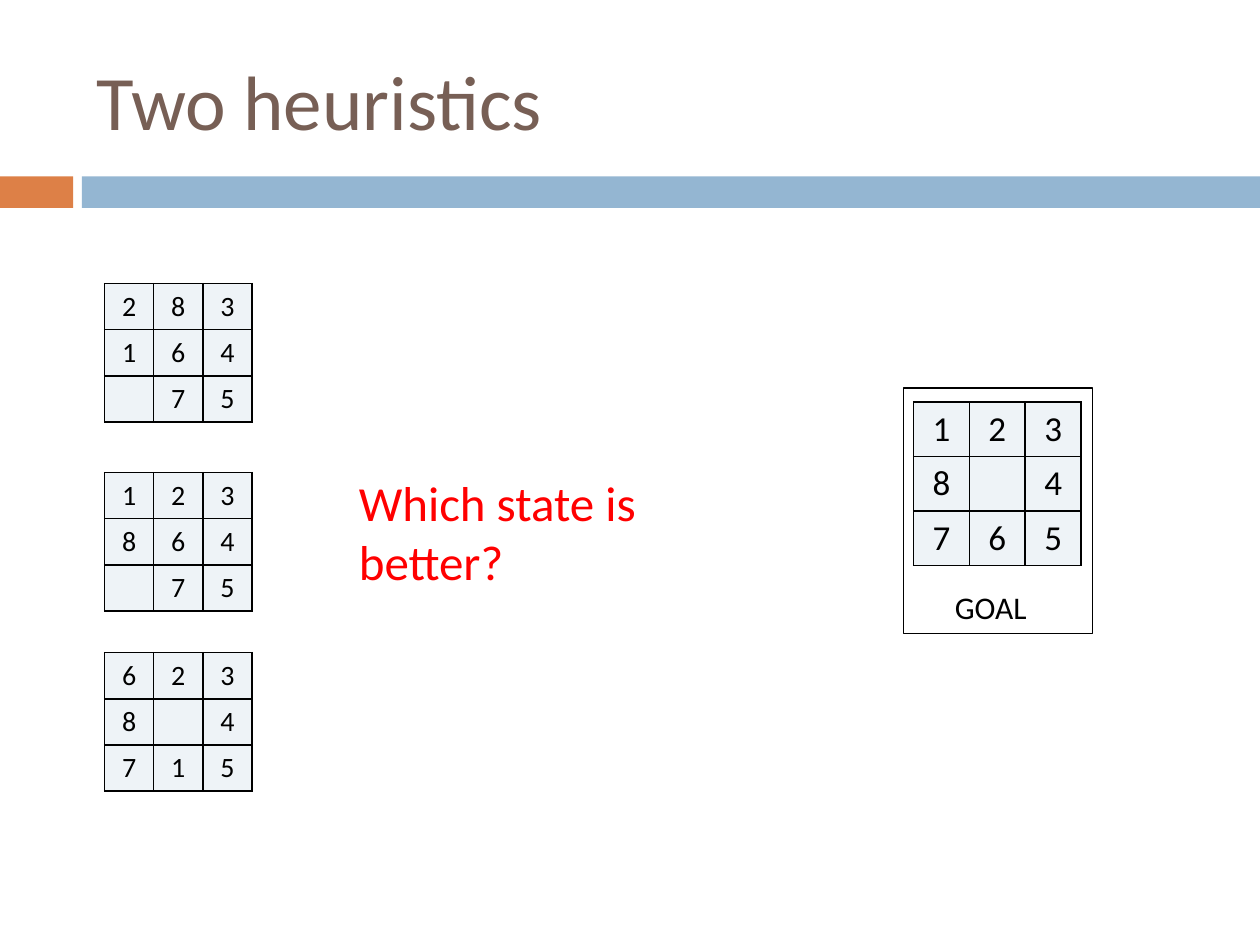
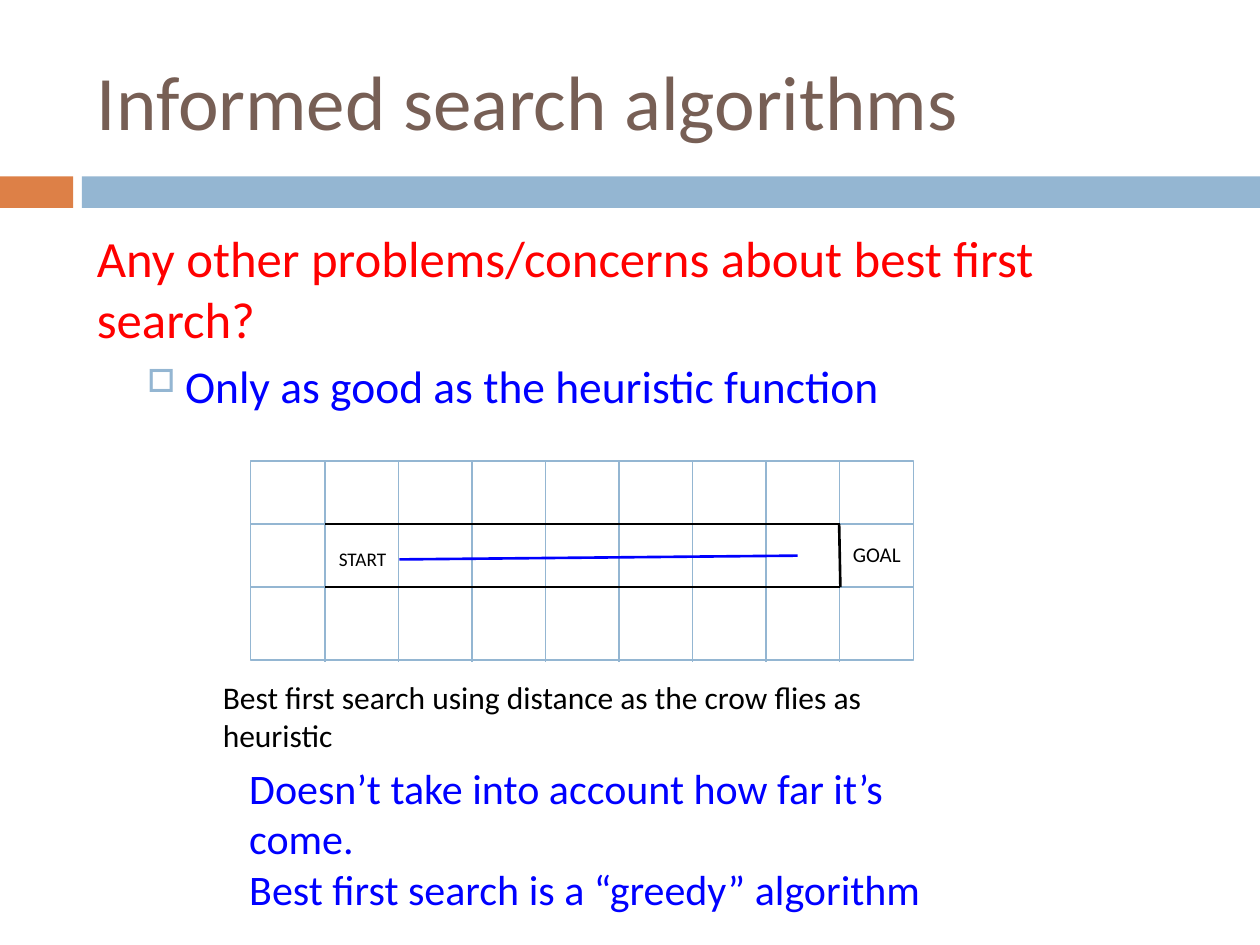
from lxml import etree
from pptx import Presentation
from pptx import util as u
from pptx.dml.color import RGBColor
from pptx.enum import shapes, text
from pptx.oxml import parse_xml
from pptx.oxml.ns import nsdecls, qn

FONT = "Calibri"
BLACK, RED, BLUE = "000000", "FF0000", "0000FF"
BROWN, ORANGE, SKY, PALE = "775F55", "DD8047", "94B6D2", "EEF3F7"
RECT = shapes.MSO_SHAPE.RECTANGLE
MID = text.MSO_ANCHOR.MIDDLE
In = u.Inches


def rgb(code):
    return RGBColor.from_string(code)


def write(frame, words, size=18, color=BLACK, align=None, wrap=True, anchor=None, before=None):
    """Put one paragraph in the frame, after any text already there."""
    frame.word_wrap = wrap
    if anchor is not None:
        frame.vertical_anchor = anchor
    para = frame.add_paragraph() if frame.text else frame.paragraphs[0]
    para.alignment = align
    if before:
        para.space_before = u.Pt(before)
    run = para.add_run()
    run.text = words
    run.font.name, run.font.size = FONT, u.Pt(size)
    run.font.color.rgb = rgb(color)
    return para


deck = Presentation()
deck.slide_width, deck.slide_height = In(10), In(7.5)

# Both slides: title and two bands
pages = []
for title in ("Two heuristics", "Informed search algorithms"):
    page = deck.slides.add_slide(deck.slide_layouts[6])
    for left, wide, color in ((0, 0.58, ORANGE), (0.65, 9.35, SKY)):
        band = page.shapes.add_shape(RECT, In(left), In(1.4), In(wide), In(0.25))
        band.shadow.inherit = False
        band.fill.solid()
        band.fill.fore_color.rgb = rgb(color)
        band.line.fill.background()
    box = page.shapes.add_textbox(In(0.67), In(0.25), In(8.92), In(1.08))
    write(box.text_frame, title, size=44, color=BROWN, anchor=MID)
    pages.append(page)
first, second = pages

# Slide 1: puzzle states and the goal, a dot for the blank tile
box = first.shapes.add_textbox(In(2.75), In(3.7), In(3.4), In(0.57))
write(box.text_frame, "Which state is better?", size=28, color=RED)

states = (
    ("283 164 .75", 0.83, 2.25, 1.17, 1.1, 16),
    ("123 864 .75", 0.83, 3.75, 1.17, 1.1, 16),
    ("623 8.4 715", 0.83, 5.18, 1.17, 1.1, 16),
    ("123 8.4 765", 7.25, 3.19, 1.33, 1.3, 20),
)
for tiles, left, top, wide, high, size in states:
    table = first.shapes.add_table(3, 3, In(left), In(top), In(wide), In(high)).table
    table.first_row = table.horz_banding = False
    for r, row in enumerate(tiles.split()):
        for c, tile in enumerate(row):
            cell = table.cell(r, c)
            cell.margin_top = cell.margin_bottom = 0
            cell.vertical_anchor = MID
            cell.fill.solid()
            cell.fill.fore_color.rgb = rgb(PALE)
            if tile != ".":
                write(cell.text_frame, tile, size=size, align=text.PP_ALIGN.CENTER)
            props = cell._tc.get_or_add_tcPr()
            for i, side in enumerate("LRTB"):
                props.insert(i, parse_xml(
                    f'<a:ln{side} {nsdecls("a")} w="12700"><a:solidFill>'
                    f'<a:srgbClr val="{BLACK}"/></a:solidFill></a:ln{side}>'))

# Labels of both slides
labels = (
    (first, "GOAL", 7.48, 4.62, 0.84, 0.4, 18),
    (second, "START", 2.59, 4.29, 0.58, 0.29, 11),
    (second, "GOAL", 6.67, 4.25, 0.62, 0.3, 12),
)
for page, words, left, top, wide, high, size in labels:
    box = page.shapes.add_textbox(In(left), In(top), In(wide), In(high))
    write(box.text_frame, words, size=size, wrap=False)

# Frames: around the goal state and around the maze
for page, left, top, wide, high, color in (
    (first, 7.17, 3.08, 1.5, 1.95, BLACK),
    (second, 1.99, 3.66, 5.26, 1.58, SKY),
):
    frame = page.shapes.add_shape(RECT, In(left), In(top), In(wide), In(high))
    frame.shadow.inherit = False
    frame.fill.background()
    frame.line.color.rgb = rgb(color)
    frame.line.width = u.Pt(0.79)

# Slide 2: question and answer
box = second.shapes.add_textbox(In(0.67), In(1.75), In(8.92), In(1.25))
write(box.text_frame, "Any other problems/concerns about best first search?",
      size=29, color=RED, before=7)
point = write(box.text_frame, "Only as good as the heuristic function",
              size=26, color=BLUE, before=5.5)
point.level = 1
props = point._p.get_or_add_pPr()
props.set("marL", str(In(0.7)))
props.set("indent", str(In(-0.3)))
tint = etree.SubElement(props, qn("a:buClr"))
etree.SubElement(tint, qn("a:srgbClr"), val=SKY)
etree.SubElement(props, qn("a:buSzPct"), val="70000")
etree.SubElement(props, qn("a:buChar"), char="□")

# Slide 2: maze grid, walls, and the straight way to the goal
step = 7 / 12
lines = [(2.58 + i * step, 3.66, 2.58 + i * step, 5.25, SKY, 1) for i in range(8)]
lines += [(1.99, y, 7.25, y, SKY, 1) for y in (4.16, 4.66)]
lines += [(2.58, y, 6.67, y, BLACK, 1.5) for y in (4.16, 4.66)]
lines += [(6.67, 4.66, 6.66, 4.16, BLACK, 1.5), (3.17, 4.44, 6.33, 4.41, BLUE, 1.5)]
for x1, y1, x2, y2, color, width in lines:
    line = second.shapes.add_connector(
        shapes.MSO_CONNECTOR.STRAIGHT, In(x1), In(y1), In(x2), In(y2))
    line.line.color.rgb = rgb(color)
    line.line.width = u.Pt(width)
    etree.SubElement(line._element.spPr, qn("a:effectLst"))

# Slide 2: remarks under the maze
box = second.shapes.add_textbox(In(1.67), In(5.33), In(5.9), In(0.4))
write(box.text_frame, "Best first search using distance as the crow flies as heuristic")
box = second.shapes.add_textbox(In(1.88), In(6), In(5.8), In(0.91))
for words in ("Doesn’t take into account how far it’s come.",
              "Best first search is a “greedy” algorithm"):
    write(box.text_frame, words, size=24, color=BLUE)

deck.save("out.pptx")
